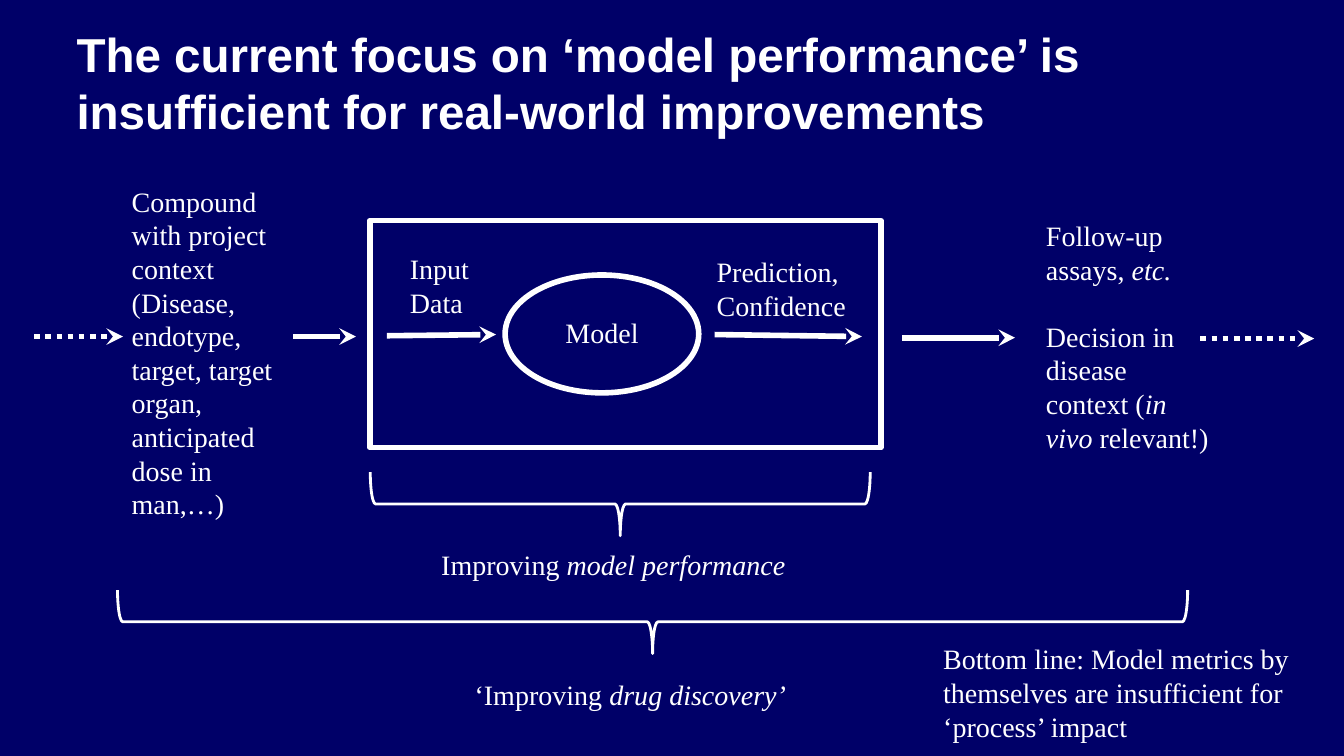
"""Build a slide on why model performance alone does not improve drug discovery."""
from lxml import etree
from pptx import Presentation
from pptx.dml.color import RGBColor
from pptx.enum.dml import MSO_LINE
from pptx.enum.shapes import MSO_CONNECTOR, MSO_SHAPE
from pptx.enum.text import MSO_ANCHOR, PP_ALIGN
from pptx.oxml.ns import qn
from pptx.util import Cm, Pt

STRAIGHT = MSO_CONNECTOR.STRAIGHT
DOTTED = MSO_LINE.ROUND_DOT
RECT, OVAL, BRACE = MSO_SHAPE.RECTANGLE, MSO_SHAPE.OVAL, MSO_SHAPE.RIGHT_BRACE
TOP, MIDDLE = MSO_ANCHOR.TOP, MSO_ANCHOR.MIDDLE
LEFT = PP_ALIGN.LEFT

COLORS = {"background": "000068", "ink": "FFFFFF"}
HEAVY, THIN = 4, 2
BRACE_DEPTH = 1.6
LEADING = 1.2

TITLE = "The current focus on ‘model performance’ is insufficient for real-world improvements"
TITLE_BOX = (1.68, 1.19, 30.91, 1.75)

# Each paragraph alternates upright and italic runs.
LABELS = [
    ((26.11, 5.38, 4.65, 7.09), True, 24, [
        ("Follow-up assays, ", "etc."),
        ("Decision in disease context (", "in vivo", " relevant!)")]),
    ((3.07, 4.52, 4.65, 8.81), True, 0, [
        ("Compound with project context",),
        ("(Disease, endotype, target, target organ, anticipated dose in man,…)",)]),
    ((11.71, 16.94, 11.79, 1.12), True, 0, [("‘Improving ", "drug discovery’")]),
    ((14, 7.82, 2.74, 1.12), True, 0, [("Model",)]),
    ((10.87, 13.67, 10.92, 1.12), True, 0, [("Improving ", "model performance")]),
    ((10.08, 6.22, 2.08, 1.96), False, 0, [("Input",), ("Data",)]),
    ((17.81, 6.3, 4.11, 1.96), False, 0, [("Prediction,",), ("Confidence",)]),
    ((23.52, 16.05, 10.34, 2.82), True, 0, [
        ("Bottom line: Model metrics by themselves are insufficient for ‘process’ impact",)]),
]
OUTLINES = [(OVAL, (12.73, 6.93, 4.88, 2.97)), (RECT, (9.32, 5.56, 12.88, 5.72))]
BRACES = [(2.96, 14.87, 26.97), (9.33, 11.9, 12.6)]
ARROWS = [
    ((0.86, 8.48, 3.1, 8.48), True),
    ((7.39, 8.48, 8.97, 8.48), False),
    ((9.75, 8.46, 12.5, 8.43), False),
    ((18.01, 8.43, 21.72, 8.48), False),
    ((22.73, 8.51, 25.58, 8.51), False),
    ((30.25, 8.53, 33.12, 8.53), True),
]


def rgb(name):
    return RGBColor.from_string(COLORS[name])


def lengths(values):
    return [Cm(v) for v in values]


def set_line(line, width):
    line.color.rgb = rgb("ink")
    line.width = Pt(width)


def add_text(slide, box, paragraphs, font, size, bold=False, wrap=True, gap=0, anchor=TOP):
    tf = slide.shapes.add_textbox(*lengths(box)).text_frame
    tf.word_wrap = wrap
    tf.vertical_anchor = anchor
    for i, runs in enumerate(paragraphs):
        p = tf.add_paragraph() if i else tf.paragraphs[0]
        p.alignment = LEFT
        p.line_spacing = Pt(round(size * LEADING, 1))
        if i and gap:
            p.space_before = Pt(gap)
        for j, text in enumerate(runs):
            r = p.add_run()
            r.text = text
            r.font.name = font
            r.font.size = Pt(size)
            r.font.bold = bold
            r.font.italic = j % 2 == 1
            r.font.color.rgb = rgb("ink")


def add_outline(slide, kind, box, width):
    sp = slide.shapes.add_shape(kind, *lengths(box))
    sp.shadow.inherit = False
    sp.fill.background()
    set_line(sp.line, width)
    return sp


def add_brace(slide, left, top, span):
    shift = (span - BRACE_DEPTH) / 2
    box = (left + shift, top - shift, BRACE_DEPTH, span)
    add_outline(slide, BRACE, box, THIN).rotation = 90


def add_arrow(slide, ends, dotted):
    cx = slide.shapes.add_connector(STRAIGHT, *lengths(ends))
    set_line(cx.line, HEAVY)
    if dotted:
        cx.line.dash_style = DOTTED
    sp_pr = cx._element.spPr
    etree.SubElement(sp_pr.find(qn("a:ln")), qn("a:tailEnd"), type="stealth")
    etree.SubElement(sp_pr, qn("a:effectLst"))


def main():
    prs = Presentation()
    prs.slide_width, prs.slide_height = Cm(33.87), Cm(19.05)
    slide = prs.slides.add_slide(prs.slide_layouts[6])
    slide.background.fill.solid()
    slide.background.fill.fore_color.rgb = rgb("background")

    add_text(slide, TITLE_BOX, [(TITLE,)], "Arial", 34, bold=True, anchor=MIDDLE)
    for kind, box in OUTLINES:
        add_outline(slide, kind, box, HEAVY)
    for brace in BRACES:
        add_brace(slide, *brace)
    for ends, dotted in ARROWS:
        add_arrow(slide, ends, dotted)
    for box, wrap, gap, paragraphs in LABELS:
        add_text(slide, box, paragraphs, "Times New Roman", 20, wrap=wrap, gap=gap)
    prs.save("out.pptx")


if __name__ == "__main__":
    main()
